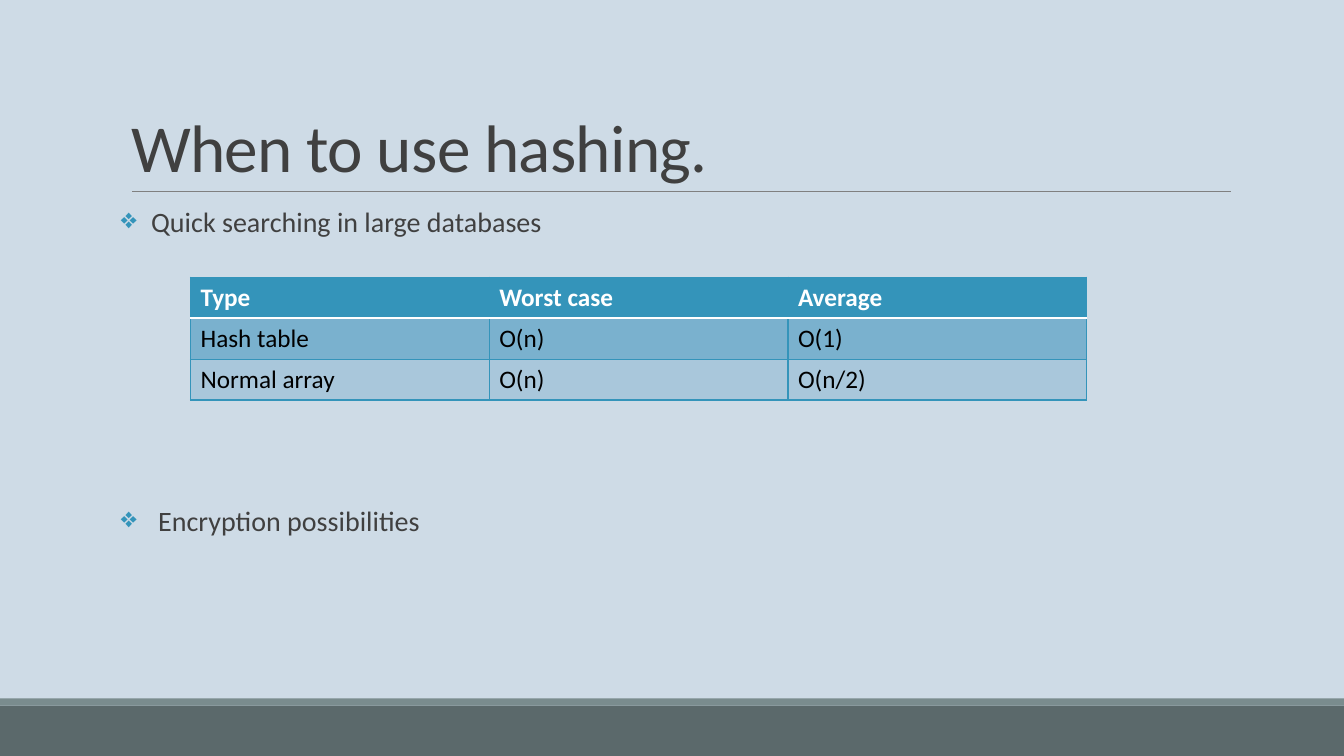
import pptx
import pptx.util
import pptx.dml.color
import pptx.enum.shapes
import pptx.enum.text
import pptx.oxml
import pptx.oxml.ns

COLORS = {
    "background": "CEDBE6", "footer": "5B696B", "strip": "7A8C8E", "rule": "808080",
    "text": "404040", "accent": "3494BA", "white": "FFFFFF", "black": "000000",
    "band_dark": "7AB1CE", "band_light": "A9C7DB",
}
FONT = "Calibri"
TABLE_ROWS = [
    ("Type", "Worst case", "Average"),
    ("Hash table", "O(n)", "O(1)"),
    ("Normal array", "O(n)", "O(n/2)"),
]
ROW_STYLES = [("accent", "white", True), ("band_dark", "black", False), ("band_light", "black", False)]
BULLETS = [
    ("Quick searching in large databases", 12, 0.3),
    ("Encryption possibilities", 190, 0.37),
]


def rgb(name):
    return pptx.dml.color.RGBColor.from_string(COLORS[name])


def apply(target, formats):
    for name, value in formats.items():
        setattr(target, name, value)


class SlideBuilder:
    columns, rows = 133.33, 75

    def __init__(self, prs):
        self.prs = prs
        self.s = prs.slides.add_slide(prs.slide_layouts[5])
        fill = self.s.background.fill
        fill.solid()
        fill.fore_color.rgb = rgb("background")

    def x(self, column):
        return round(self.prs.slide_width * column / self.columns)

    def y(self, row):
        return round(self.prs.slide_height * row / self.rows)

    def box(self, left, top, width, height):
        return self.x(left), self.y(top), self.x(width), self.y(height)

    def run(self, p, text, size, color="text", bold=False):
        r = p.add_run()
        r.text = text
        apply(r.font, {"name": FONT, "size": pptx.util.Pt(size), "bold": bold})
        r.font.color.rgb = rgb(color)
        return r

    def bar(self, top, height, color):
        sp = self.s.shapes.add_shape(
            pptx.enum.shapes.MSO_SHAPE.RECTANGLE, *self.box(0, top, self.columns, height))
        sp.shadow.inherit = False
        sp.fill.solid()
        sp.fill.fore_color.rgb = rgb(color)
        sp.line.fill.background()

    def rule(self, left, right, row):
        line = self.s.shapes.add_connector(
            pptx.enum.shapes.MSO_CONNECTOR.STRAIGHT,
            self.x(left), self.y(row), self.x(right), self.y(row))
        line.line.color.rgb = rgb("rule")
        line.line.width = pptx.util.Pt(0.5)
        pptx.oxml.ns.qn("a:effectLst")
        line._element.spPr.append(line._element.makeelement(pptx.oxml.ns.qn("a:effectLst")))

    def title(self, text, *place):
        sp = self.s.shapes.title
        apply(sp, dict(zip(("left", "top", "width", "height"), self.box(*place))))
        tf = sp.text_frame
        apply(tf, {
            "word_wrap": True,
            "auto_size": pptx.enum.text.MSO_AUTO_SIZE.NONE,
            "vertical_anchor": pptx.enum.text.MSO_ANCHOR.BOTTOM,
        })
        p = tf.paragraphs[0]
        apply(p, {"alignment": pptx.enum.text.PP_ALIGN.LEFT, "line_spacing": 0.85})
        r = self.run(p, text, 48)
        r.font._element.set("spc", "-50")

    def bullets(self, items, *place):
        tf = self.s.shapes.add_textbox(*self.box(*place)).text_frame
        apply(tf, {"word_wrap": True, "margin_left": 0, "margin_right": 0})
        for i, (text, before, indent) in enumerate(items):
            p = tf.add_paragraph() if i else tf.paragraphs[0]
            apply(p, {
                "line_spacing": 0.9,
                "space_before": pptx.util.Pt(before),
                "space_after": pptx.util.Pt(2),
            })
            pPr = p._p.get_or_add_pPr()
            pPr.set("marL", str(pptx.util.Inches(indent)))
            pPr.set("indent", str(-pptx.util.Inches(indent)))
            color = pptx.oxml.parse_xml(
                f'<a:buClr {pptx.oxml.ns.nsdecls("a")}><a:srgbClr val="{COLORS["accent"]}"/></a:buClr>')
            char = pptx.oxml.parse_xml(f'<a:buChar {pptx.oxml.ns.nsdecls("a")} char="❖"/>')
            pPr.extend([color, char])
            self.run(p, text, 20)

    def border(self, cell, index, side, color, width):
        cell._tc.get_or_add_tcPr().insert(index, pptx.oxml.parse_xml(
            f'<a:ln{side} {pptx.oxml.ns.nsdecls("a")} w="{pptx.util.Pt(width)}">'
            f'<a:solidFill><a:srgbClr val="{COLORS[color]}"/></a:solidFill></a:ln{side}>'))

    def table(self, data, styles, *place):
        table = self.s.shapes.add_table(len(data), len(data[0]), *self.box(*place)).table
        for i, (texts, (fill, color, bold)) in enumerate(zip(data, styles)):
            for j, text in enumerate(texts):
                cell = table.cell(i, j)
                cell.fill.solid()
                cell.fill.fore_color.rgb = rgb(fill)
                self.run(cell.text_frame.paragraphs[0], text, 18, color, bold)
                for index, side in enumerate("LRTB"):
                    header_edge = (i, side) in ((0, "B"), (1, "T"))
                    line = ("white", 1.25) if header_edge else ("accent", 1)
                    self.border(cell, index, side, *line)


def main():
    prs = pptx.Presentation()
    prs.slide_width = pptx.util.Inches(13.33)
    prs.slide_height = pptx.util.Inches(7.5)
    slide = SlideBuilder(prs)
    slide.bar(70, 5, "footer")
    slide.bar(69.3, 0.7, "strip")
    slide.rule(13.1, 122.1, 19)
    slide.title("When to use hashing.", 12, 3.1, 110, 15.9)
    slide.bullets(BULLETS, 12, 20.2, 110, 44)
    slide.table(TABLE_ROWS, ROW_STYLES, 18.9, 27.5, 88.9, 12.2)
    prs.save("out.pptx")


if __name__ == "__main__":
    main()
